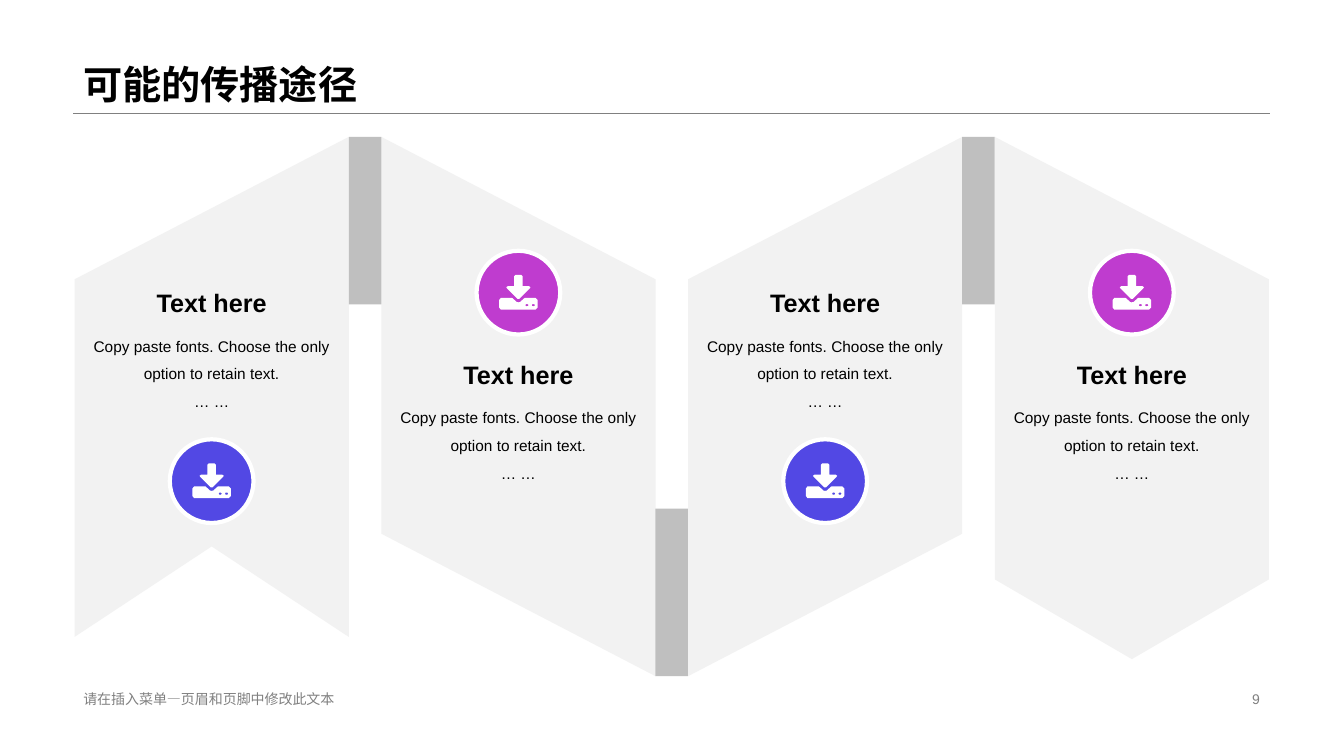
from dataclasses import dataclass
from math import cos, pi, sin

from pptx import Presentation
from pptx.dml.color import RGBColor
from pptx.enum.shapes import MSO_CONNECTOR, MSO_SHAPE
from pptx.enum.text import MSO_ANCHOR, PP_ALIGN
from pptx.oxml.ns import qn
from pptx.util import Cm, Pt
from lxml import etree

RECT, OVAL, SLANT = MSO_SHAPE.RECTANGLE, MSO_SHAPE.OVAL, MSO_SHAPE.PARALLELOGRAM
STRAIGHT = MSO_CONNECTOR.STRAIGHT
TOP, MIDDLE, BOTTOM = MSO_ANCHOR.TOP, MSO_ANCHOR.MIDDLE, MSO_ANCHOR.BOTTOM
LEFT, CENTER, RIGHT = PP_ALIGN.LEFT, PP_ALIGN.CENTER, PP_ALIGN.RIGHT

PANEL_X, PITCH, PANEL_W = 1.88, 7.73, 6.91
PEAK, SHOULDER, FOOT = 3.45, 7.04, 17.04
BAR_W, BAR_H = PITCH - PANEL_W, 4.22
DISC, ICON_W = 2.11, 0.97

TRAY = [(0, 0.63), (0.04, 0.58), (0.33, 0.58), (0.41, 0.65), (0.44, 0.68),
        (0.48, 0.69), (0.53, 0.68), (0.56, 0.65), (0.64, 0.58), (0.92, 0.58),
        (0.97, 0.63), (0.97, 0.82), (0.92, 0.87), (0.04, 0.87), (0, 0.82)]
ARROW = [(0.38, 0.03), (0.41, 0), (0.56, 0), (0.59, 0.03), (0.59, 0.28),
         (0.75, 0.28), (0.79, 0.31), (0.77, 0.34), (0.51, 0.6), (0.46, 0.6),
         (0.2, 0.34), (0.18, 0.31), (0.22, 0.28), (0.38, 0.28)]
DOTS = [[(x + 0.04 * cos(k * pi / 4), 0.76 - 0.03 * sin(k * pi / 4)) for k in range(8)]
        for x in (0.7, 0.86)]
DOWNLOAD = [TRAY, ARROW, *DOTS]


@dataclass(frozen=True)
class Theme:
    """Colours, font and type sizes of the slide."""
    font: str = "Arial"
    ink: str = "000000"
    muted: str = "808080"
    panel: str = "F2F2F2"
    bar: str = "BFBFBF"
    white: str = "FFFFFF"
    blue: str = "5248E4"
    magenta: str = "BF3CCF"
    title: int = 28
    heading: int = 18
    body: int = 11
    footer: int = 10


class Deck:
    """Draws styled elements on the current slide."""

    def __init__(self, theme):
        self.theme = theme
        self.prs = Presentation()
        self.prs.slide_width, self.prs.slide_height = Cm(33.87), Cm(19.05)
        self.s = self.prs.slides.add_slide(self.prs.slide_layouts[6])

    def paint(self, sp, fill, outline=None):
        sp.shadow.inherit = False
        sp.fill.solid()
        sp.fill.fore_color.rgb = RGBColor.from_string(fill)
        if outline:
            sp.line.color.rgb = RGBColor.from_string(outline)
            sp.line.width = Pt(3)
        else:
            sp.line.fill.background()
        return sp

    def shape(self, kind, x, y, w, h, fill, outline=None):
        sp = self.s.shapes.add_shape(kind, Cm(x), Cm(y), Cm(w), Cm(h))
        return self.paint(sp, fill, outline)

    def outline(self, x, y, contours, fill):
        paths = [[(Cm(x + dx), Cm(y + dy)) for dx, dy in c] for c in contours]
        fb = self.s.shapes.build_freeform(*paths[0][0], scale=1.0)
        fb.add_line_segments(paths[0][1:])
        for path in paths[1:]:
            fb.move_to(*path[0])
            fb.add_line_segments(path[1:])
        return self.paint(fb.convert_to_shape(), fill)

    def slanted(self, x, rising):
        length = FOOT - PEAK
        sp = self.shape(SLANT, x + (PANEL_W - length) / 2, PEAK + (length - PANEL_W) / 2,
                        length, PANEL_W, self.theme.panel)
        sp.adjustments[0] = (SHOULDER - PEAK) / PANEL_W
        sp.rotation = 270 if rising else 90
        if rising:
            sp.element.spPr.get_or_add_xfrm().set("flipH", "1")

    def rule(self, x1, x2, y):
        cn = self.s.shapes.add_connector(STRAIGHT, Cm(x1), Cm(y), Cm(x2), Cm(y))
        cn.line.color.rgb = RGBColor.from_string(self.theme.muted)
        cn.line.width = Pt(0.25)
        etree.SubElement(cn.element.spPr, qn("a:effectLst"))

    def text(self, x, y, w, h, words, size, color, align=LEFT, anchor=MIDDLE,
             bold=False, spacing=1.0):
        tf = self.s.shapes.add_textbox(Cm(x), Cm(y), Cm(w), Cm(h)).text_frame
        tf.word_wrap = True
        tf.vertical_anchor = anchor
        tf.text = words
        for p in tf.paragraphs:
            p.alignment, p.line_spacing = align, spacing
            for r in p.runs:
                r.font.name, r.font.size, r.font.bold = self.theme.font, Pt(size), bold
                r.font.color.rgb = RGBColor.from_string(color)

    def badge(self, x, y, fill):
        self.shape(OVAL, x + (PANEL_W - DISC) / 2, y, DISC, DISC, fill, self.theme.white)
        self.outline(x + (PANEL_W - ICON_W) / 2, y + 0.61, DOWNLOAD, self.theme.white)

    def message(self, x, y):
        t = self.theme
        self.text(x + 0.13, y, 6.65, 1.5, "Text here", t.heading, t.ink,
                  CENTER, BOTTOM, bold=True)
        self.text(x + 0.13, y + 1.5, 6.65, 2.49,
                  "Copy paste fonts. Choose the only option to retain text.\n… …",
                  t.body, t.ink, CENTER, TOP, spacing=1.5)


def main():
    t = Theme()
    deck = Deck(t)
    deck.rule(1.85, 32, 2.84)
    deck.text(1.85, 0, 30.15, 2.84, "可能的传播途径", t.title, t.ink,
              anchor=BOTTOM, bold=True, spacing=0.9)
    deck.text(1.85, 17.32, 11.51, 0.58, "请在插入菜单—页眉和页脚中修改此文本", t.footer, t.muted)
    deck.text(23.92, 17.32, 8.08, 0.58, "9", t.footer, t.muted, RIGHT)

    xs = [PANEL_X + i * PITCH for i in range(4)]
    mid = PANEL_W / 2
    deck.outline(xs[0], 0, [[(0, SHOULDER), (PANEL_W, PEAK), (PANEL_W, 16.05),
                             (mid, 13.77), (0, 16.05)]], t.panel)
    deck.slanted(xs[1], rising=False)
    deck.slanted(xs[2], rising=True)
    deck.outline(xs[3], 0, [[(0, PEAK), (PANEL_W, SHOULDER), (PANEL_W, 14.6),
                             (mid, 16.61), (0, 14.6)]], t.panel)
    for x, y in zip(xs, (PEAK, FOOT - BAR_H, PEAK)):
        deck.shape(RECT, x + PANEL_W, y, BAR_W, BAR_H, t.bar)
    for i, x in enumerate(xs):
        badge_y, color, text_y = [(11.07, t.blue, 6.63), (6.32, t.magenta, 8.43)][i % 2]
        deck.badge(x, badge_y, color)
        deck.message(x, text_y)
    deck.prs.save("out.pptx")


if __name__ == "__main__":
    main()
